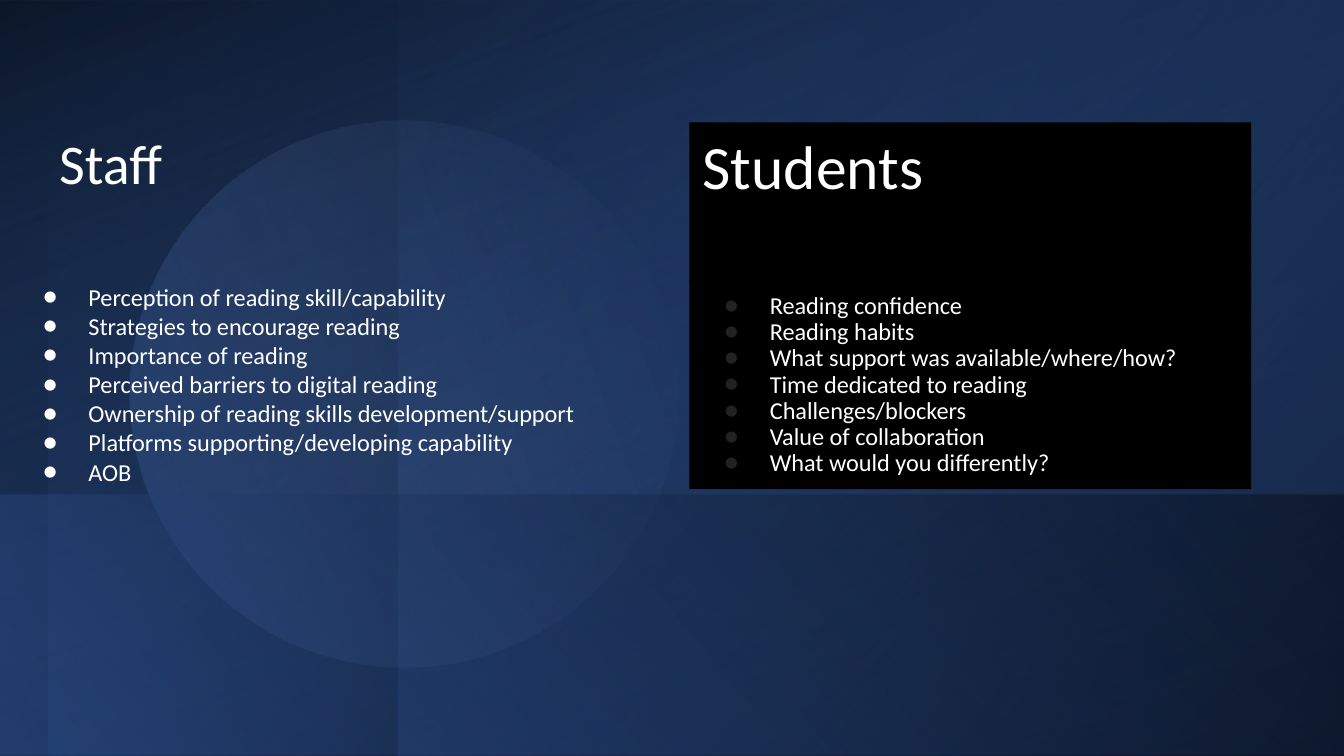
from lxml.etree import SubElement
from pptx import Presentation
from pptx.dml.color import RGBColor
from pptx.enum.shapes import MSO_SHAPE as SHAPE
from pptx.enum.text import MSO_ANCHOR as ANCHOR, MSO_AUTO_SIZE as AUTO, PP_ALIGN as ALIGN
from pptx.oxml import parse_xml
from pptx.oxml.ns import nsdecls, qn
from pptx.util import Inches, Pt

WIDTH, HEIGHT = Inches(10), Inches(5.625)
FONT = "Calibri"
COLORS = {
    "slate": "526582", "black": "000000", "white": "FFFFFF", "grey": "222222",
    "navy": "203864", "blue": "2F5597", "bright": "4472C4", "pale": "8FAADC",
}

# Percent of slide: left, top, width, height
FULL = (-0.1, 0, 100.3, 100)
# Preset, box, rotation, flipped, gradient angle, stops (position, colour, opacity)
BACKDROP = [
    (SHAPE.RECTANGLE, FULL, 180, False, 70, [(0, "black", 100), (100, "blue", 100)]),
    (SHAPE.RECTANGLE, (3.6, 0, 96.6, 100), 180, True, 140,
     [(21, "navy", 83), (100, "bright", 0)]),
    (SHAPE.RECTANGLE, (-0.1, 0, 29.7, 100), 180, False, 220,
     [(0, "blue", 0), (99, "black", 41)]),
    (SHAPE.RECTANGLE, FULL, 0, True, 290, [(3, "blue", 0), (100, "black", 73)]),
    (SHAPE.RECTANGLE, (36.8, -12.6, 56.3, 125.3), 90, True, 230,
     [(3, "blue", 0), (100, "black", 27)]),
    (SHAPE.OVAL, (9.7, 15.8, 40.7, 72.7), 99.9, False, 240,
     [(0, "bright", 26), (85, "pale", 0)]),
    (SHAPE.RECTANGLE, (0, 65.4, 100.2, 34.6), 0, True, 220,
     [(0, "blue", 50), (99, "black", 34)]),
]

STAFF_TOPICS = [
    "Perception of reading skill/capability",
    "Strategies to encourage reading",
    "Importance of reading",
    "Perceived barriers to digital reading",
    "Ownership of reading skills development/support",
    "Platforms supporting/developing capability",
    "AOB",
]
STUDENT_TOPICS = [
    "Reading confidence",
    "Reading habits",
    "What support was available/where/how?",
    "Time dedicated to reading",
    "Challenges/blockers",
    "Value of collaboration",
    "What would you differently?",
]


def rgb(name):
    return RGBColor.from_string(COLORS[name])


def place(box):
    """Turn percent shares of the slide into lengths."""
    return [int(share * side / 100) for share, side in zip(box, (WIDTH, HEIGHT) * 2)]


def add_plain_shape(slide, preset, box):
    s = slide.shapes.add_shape(preset, *place(box))
    s.shadow.inherit = False
    s.line.fill.background()
    return s


def add_gradient_shape(slide, preset, box, rotation, flipped, angle, stops):
    s = add_plain_shape(slide, preset, box)
    s.rotation = rotation
    s.fill.background()
    spPr = s._element.spPr
    if flipped:
        spPr.find(qn("a:xfrm")).set("flipH", "1")
    stop_xml = "".join(
        f'<a:gs pos="{pos * 1000}"><a:srgbClr val="{COLORS[color]}">'
        f'<a:alpha val="{opacity * 1000}"/></a:srgbClr></a:gs>'
        for pos, color, opacity in stops)
    gradient = parse_xml(
        f'<a:gradFill {nsdecls("a")} rotWithShape="1"><a:gsLst>{stop_xml}</a:gsLst>'
        f'<a:lin ang="{angle * 60000}" scaled="0"/></a:gradFill>')
    spPr.replace(spPr.find(qn("a:noFill")), gradient)


def add_black_panel(slide, box):
    s = add_plain_shape(slide, SHAPE.RECTANGLE, box)
    s.fill.solid()
    s.fill.fore_color.rgb = rgb("black")
    return s


def write(s, lines, size, spacing, anchor=ANCHOR.TOP, inset=0.1):
    tf = s.text_frame
    tf.text = "\n".join(lines)
    tf.word_wrap = True
    tf.auto_size = AUTO.NONE
    tf.vertical_anchor = anchor
    tf.margin_left = tf.margin_right = Inches(0.1)
    tf.margin_top = tf.margin_bottom = Inches(inset)
    for p in tf.paragraphs:
        p.alignment = ALIGN.LEFT
        p.line_spacing = spacing
        p.space_before = p.space_after = Pt(0)
        font = p.runs[0].font
        font.name, font.size = FONT, Pt(size)
        font.color.rgb = rgb("white")


def add_bullets(s, color):
    for p in s.text_frame.paragraphs:
        pPr = p._p.get_or_add_pPr()
        pPr.set("marL", str(Inches(0.5)))
        pPr.set("indent", str(Inches(-0.34)))
        bullet_color = SubElement(pPr, qn("a:buClr"))
        SubElement(bullet_color, qn("a:srgbClr")).set("val", COLORS[color])
        SubElement(pPr, qn("a:buFont")).set("typeface", FONT)
        SubElement(pPr, qn("a:buChar")).set("char", "●")


def add_staff(slide):
    title = slide.shapes.title
    slide.shapes._spTree.append(title._element)  # in front of the backdrop
    title.left, title.top, title.width, title.height = place((3.4, 16.2, 37.4, 21.5))
    write(title, ["Staff"], 30, 0.9)

    topics = slide.shapes.add_textbox(*place((0.6, 36.4, 50.2, 29)))
    write(topics, STAFF_TOPICS, 13, 1, inset=0.05)
    topics.text_frame.auto_size = AUTO.SHAPE_TO_FIT_TEXT
    add_bullets(topics, "white")


def add_students(slide):
    heading = add_black_panel(slide, (51.3, 16.2, 41.8, 21.5))
    write(heading, ["Students"], 33, 0.9)

    topics = add_black_panel(slide, (51.3, 37.2, 41.8, 27.5))
    write(topics, STUDENT_TOPICS, 13, 0.9, ANCHOR.MIDDLE)
    add_bullets(topics, "grey")


def main():
    prs = Presentation()
    prs.slide_width, prs.slide_height = WIDTH, HEIGHT
    slide = prs.slides.add_slide(prs.slide_layouts[5])
    slide.background.fill.solid()
    slide.background.fill.fore_color.rgb = rgb("slate")
    for layer in BACKDROP:
        add_gradient_shape(slide, *layer)
    add_staff(slide)
    add_students(slide)
    prs.save("out.pptx")


if __name__ == "__main__":
    main()
